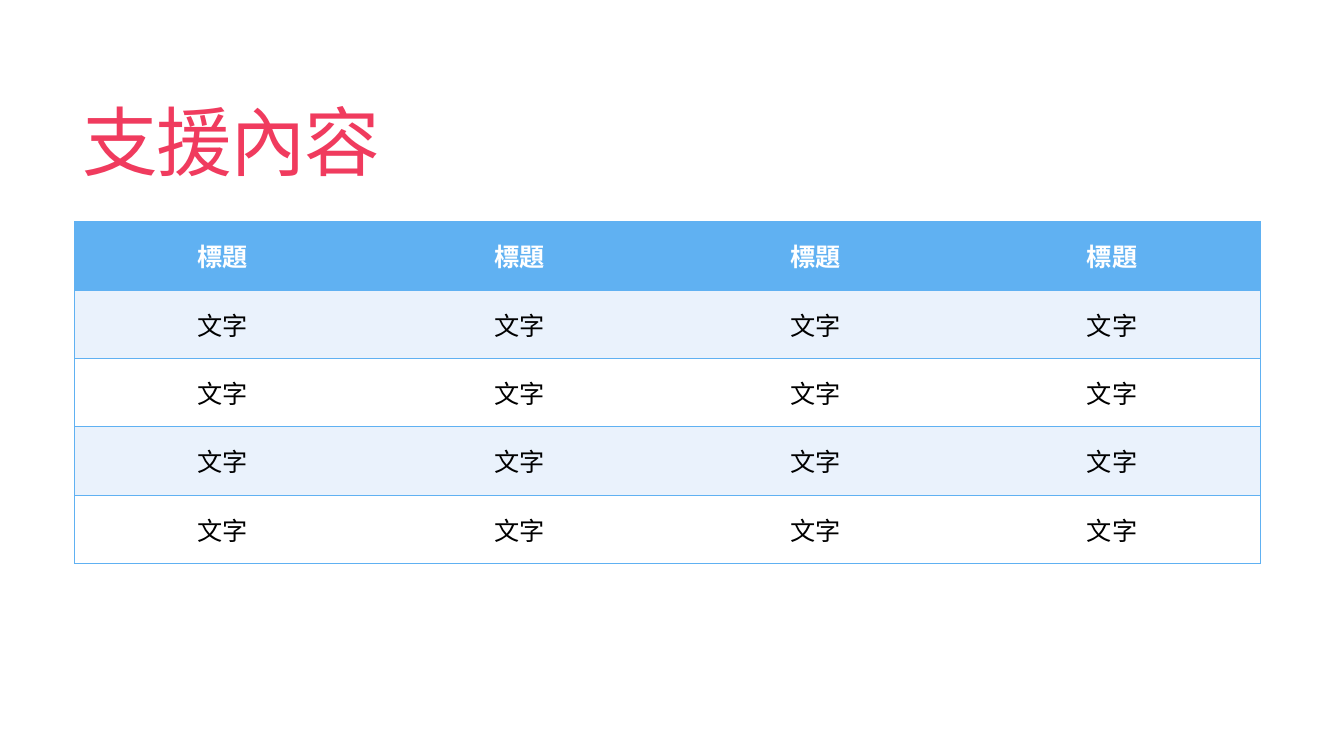
from pptx import Presentation
from pptx import util as u
from pptx.dml import color
from pptx.enum import text
from pptx.oxml import ns, xmlchemy

FONT = "Noto Sans CJK TC"
BLUE, PALE, WHITE, BLACK, ROSE = "60B1F2", "EAF2FC", "FFFFFF", "000000", "F03B5E"


def rgb(value):
    """Turn a hex string into a colour."""
    return color.RGBColor.from_string(value)


def add_child(parent, tag, **attributes):
    """Append a drawing element with its attributes and return it."""
    child = xmlchemy.OxmlElement(tag)
    for key, value in attributes.items():
        child.set(key, value)
    parent.append(child)
    return child


def style_run(run, size, hue, bold=False):
    """Give a run its typeface, size, colour and weight."""
    run.font.name = FONT
    run.font.size = u.Pt(size)
    run.font.bold = bold
    run.font.color.rgb = rgb(hue)
    add_child(run.font._element, "a:ea", typeface=FONT)


def set_border(cell, side, hue=None):
    """Draw one side of a cell, or clear it when no colour is given."""
    properties = cell._tc.get_or_add_tcPr()
    line = add_child(properties, f"a:ln{side}", w=str(u.Pt(1)))
    if hue:
        fill = add_child(line, "a:solidFill")
        add_child(fill, "a:srgbClr", val=hue)
    else:
        add_child(line, "a:noFill")


def add_heading(slide, wording, left, top, width, height):
    """Place the slide title in the given box."""
    heading = slide.shapes.title
    heading.left, heading.top = u.Inches(left), u.Inches(top)
    heading.width, heading.height = u.Inches(width), u.Inches(height)
    frame = heading.text_frame
    frame.text = wording
    frame.auto_size = text.MSO_AUTO_SIZE.NONE
    frame.vertical_anchor = text.MSO_ANCHOR.MIDDLE
    paragraph = frame.paragraphs[0]
    paragraph.alignment = text.PP_ALIGN.LEFT
    paragraph.line_spacing = 0.85
    style_run(paragraph.runs[0], 54, ROSE)
    paragraph.runs[0].font._element.set("spc", "-120")


def add_support_table(slide, entries, left, top, width, height):
    """Fill the given box with a banded table under a blue header row."""
    rows, columns = len(entries), len(entries[0])
    table = slide.shapes.add_table(
        rows, columns, u.Inches(left), u.Inches(top), u.Inches(width), u.Inches(height)
    ).table
    for r, entry in enumerate(entries):
        header = r == 0
        band = BLUE if header else PALE if r % 2 else WHITE
        for c, wording in enumerate(entry):
            cell = table.cell(r, c)
            cell.text = wording
            cell.vertical_anchor = text.MSO_ANCHOR.MIDDLE
            paragraph = cell.text_frame.paragraphs[0]
            paragraph.alignment = text.PP_ALIGN.CENTER
            style_run(paragraph.runs[0], 18, WHITE if header else BLACK, header)
            set_border(cell, "L", BLUE if c == 0 else None)
            set_border(cell, "R", BLUE if c == columns - 1 else None)
            set_border(cell, "T", BLUE)
            set_border(cell, "B", BLUE)
            cell.fill.solid()
            cell.fill.fore_color.rgb = rgb(band)


def main():
    """Build the support slide and save it."""
    deck = Presentation()
    deck.slide_width, deck.slide_height = u.Inches(13.33), u.Inches(7.5)
    slide = deck.slides.add_slide(deck.slide_layouts[5])
    add_heading(slide, "支援內容", 0.72, 0.56, 11.78, 1.81)
    entries = [["標題"] * 4] + [["文字"] * 4 for _ in range(4)]
    add_support_table(slide, entries, 0.74, 2.2, 11.76, 3.39)
    deck.save("out.pptx")


if __name__ == "__main__":
    main()
